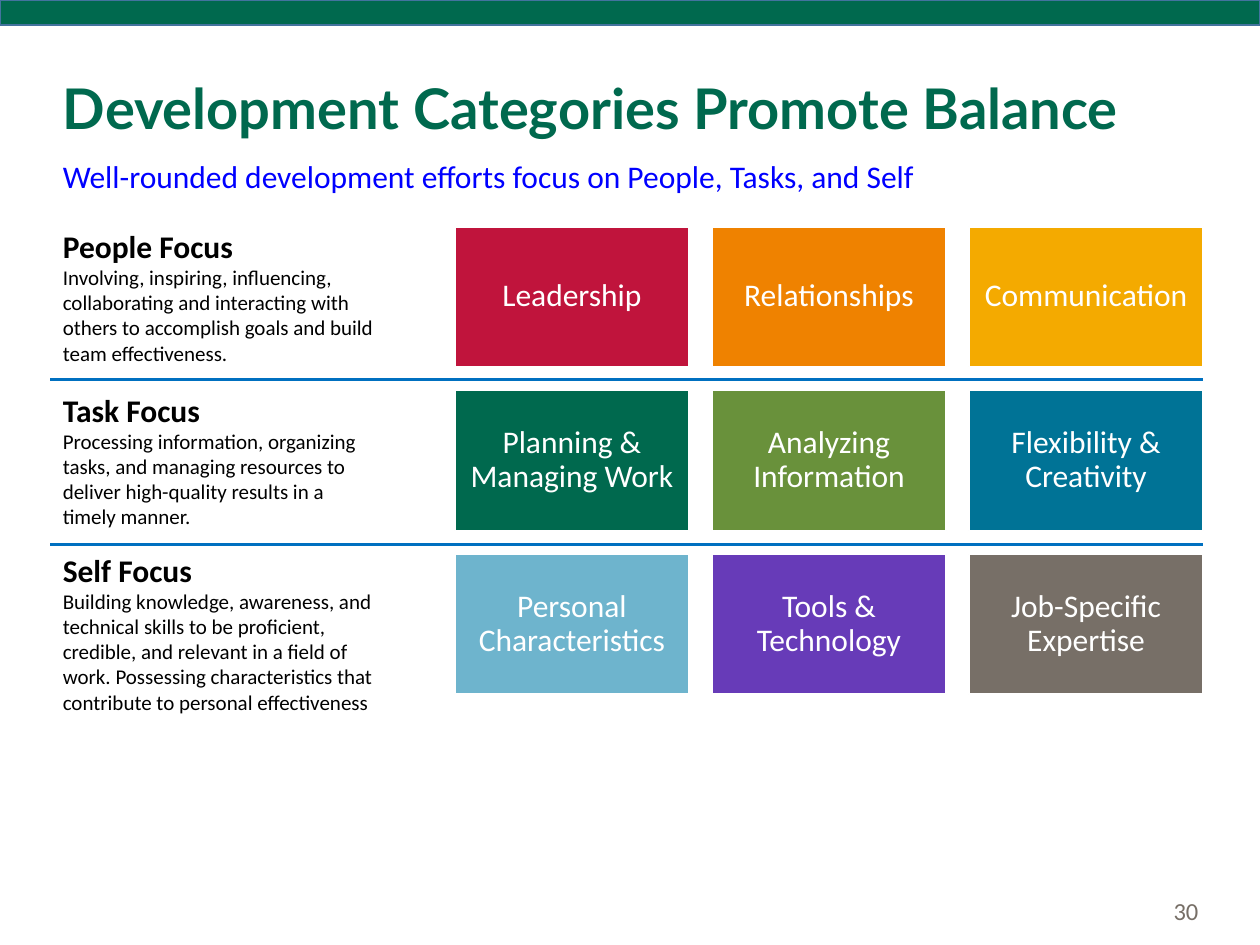
import pptx
import pptx.dml.color
import pptx.enum.shapes
import pptx.enum.text
import pptx.oxml
import pptx.util
from pptx.util import Inches

ALIGN = pptx.enum.text.PP_ALIGN
ANCHOR = pptx.enum.text.MSO_ANCHOR
GREEN, WHITE, BLACK, GREY = "00694E", "FFFFFF", "000000", "776F67"

FOCUS_ROWS = [
    ("People Focus",
     "Involving, inspiring, influencing, collaborating and interacting with "
     "others to accomplish goals and build team effectiveness.",
     1.75, 1.21,
     [("Leadership", "C0143C"), ("Relationships", "EF8200"), ("Communication", "F4AA00")]),
    ("Task Focus",
     "Processing information, organizing tasks, and managing resources to "
     "deliver high-quality results in a timely manner.",
     3.05, 1.21,
     [("Planning & Managing Work", GREEN), ("Analyzing Information", "69913B"),
      ("Flexibility & Creativity", "007396")]),
    ("Self Focus",
     "Building knowledge, awareness, and technical skills to be proficient, "
     "credible, and relevant in a field of work. Possessing characteristics "
     "that contribute to personal effectiveness",
     4.32, 1.41,
     [("Personal Characteristics", "6EB4CD"), ("Tools & Technology", "673BB8"),
      ("Job-Specific Expertise", GREY)]),
]


def color(value):
    return pptx.dml.color.RGBColor.from_string(value)


class SlideBuilder:
    """Draws styled elements on the current slide."""

    font = "Calibri"

    def __init__(self, page):
        self.page = page

    def fill_text(self, frame, lines, align=ALIGN.LEFT, anchor=ANCHOR.TOP, spacing=None, font=None):
        frame.word_wrap = True
        frame.vertical_anchor = anchor
        for index, (text, size, fill, bold) in enumerate(lines):
            para = frame.add_paragraph() if index else frame.paragraphs[0]
            para.alignment = align
            para.line_spacing = spacing
            span = para.add_run()
            span.text = text
            span.font.name = font or self.font
            span.font.size = pptx.util.Pt(size)
            span.font.bold = bold
            span.font.color.rgb = color(fill)

    def text(self, left, top, width, height, lines, **style):
        box = self.page.shapes.add_textbox(
            Inches(left), Inches(top), Inches(width), Inches(height))
        self.fill_text(box.text_frame, lines, **style)

    def rectangle(self, left, top, width, height, fill, outline):
        box = self.page.shapes.add_shape(
            pptx.enum.shapes.MSO_SHAPE.RECTANGLE,
            Inches(left), Inches(top), Inches(width), Inches(height))
        box.shadow.inherit = False
        box.fill.solid()
        box.fill.fore_color.rgb = color(fill)
        box.line.color.rgb = color(outline)
        box.line.width = pptx.util.Pt(1)
        return box

    def tile(self, left, top, label, fill):
        frame = self.rectangle(left, top, 1.86, 1.11, fill, WHITE).text_frame
        frame.margin_left = frame.margin_right = Inches(0.07)
        frame.margin_top = frame.margin_bottom = Inches(0.07)
        self.fill_text(frame, [(label, 18, WHITE, False)],
                       align=ALIGN.CENTER, anchor=ANCHOR.MIDDLE, spacing=0.9)

    def divider(self, top):
        line = self.page.shapes.add_connector(
            pptx.enum.shapes.MSO_CONNECTOR.STRAIGHT,
            Inches(0.4), Inches(top), Inches(9.55), Inches(top))
        line.line.color.rgb = color("0070C0")
        line.line.width = pptx.util.Pt(1.5)
        properties = line._element.spPr
        properties.append(pptx.oxml.parse_xml(
            '<a:effectLst xmlns:a="http://schemas.openxmlformats.org/drawingml/2006/main"/>'))


def main():
    deck = pptx.Presentation()
    deck.slide_width, deck.slide_height = Inches(10), Inches(7.5)
    builder = SlideBuilder(deck.slides.add_slide(deck.slide_layouts[6]))

    builder.text(6.61, 7.03, 3, 0.4, [("30", 14, GREY, False)],
                 align=ALIGN.RIGHT, anchor=ANCHOR.MIDDLE)
    builder.rectangle(0, 0, 10, 0.2, GREEN, "43739E")
    builder.text(0.4, 0.16, 9.15, 1.45,
                 [("Development Categories Promote Balance", 32, GREEN, True)],
                 anchor=ANCHOR.MIDDLE, spacing=0.9, font="Lato")
    builder.text(0.4, 1.2, 9.17, 0.4,
                 [("Well-rounded development efforts focus on People, Tasks, and Self",
                   18, "0000FF", False)])

    for row, (heading, summary, top, height, tiles) in enumerate(FOCUS_ROWS):
        builder.text(0.4, top, 2.71, height,
                     [(heading, 18, BLACK, True), (summary, 12, BLACK, False)])
        for column, (label, fill) in enumerate(tiles):
            builder.tile(3.61 + 2.04 * column, 1.8 + 1.3 * row, label, fill)

    for top in (3.01, 4.32):
        builder.divider(top)

    deck.save("out.pptx")


if __name__ == "__main__":
    main()
